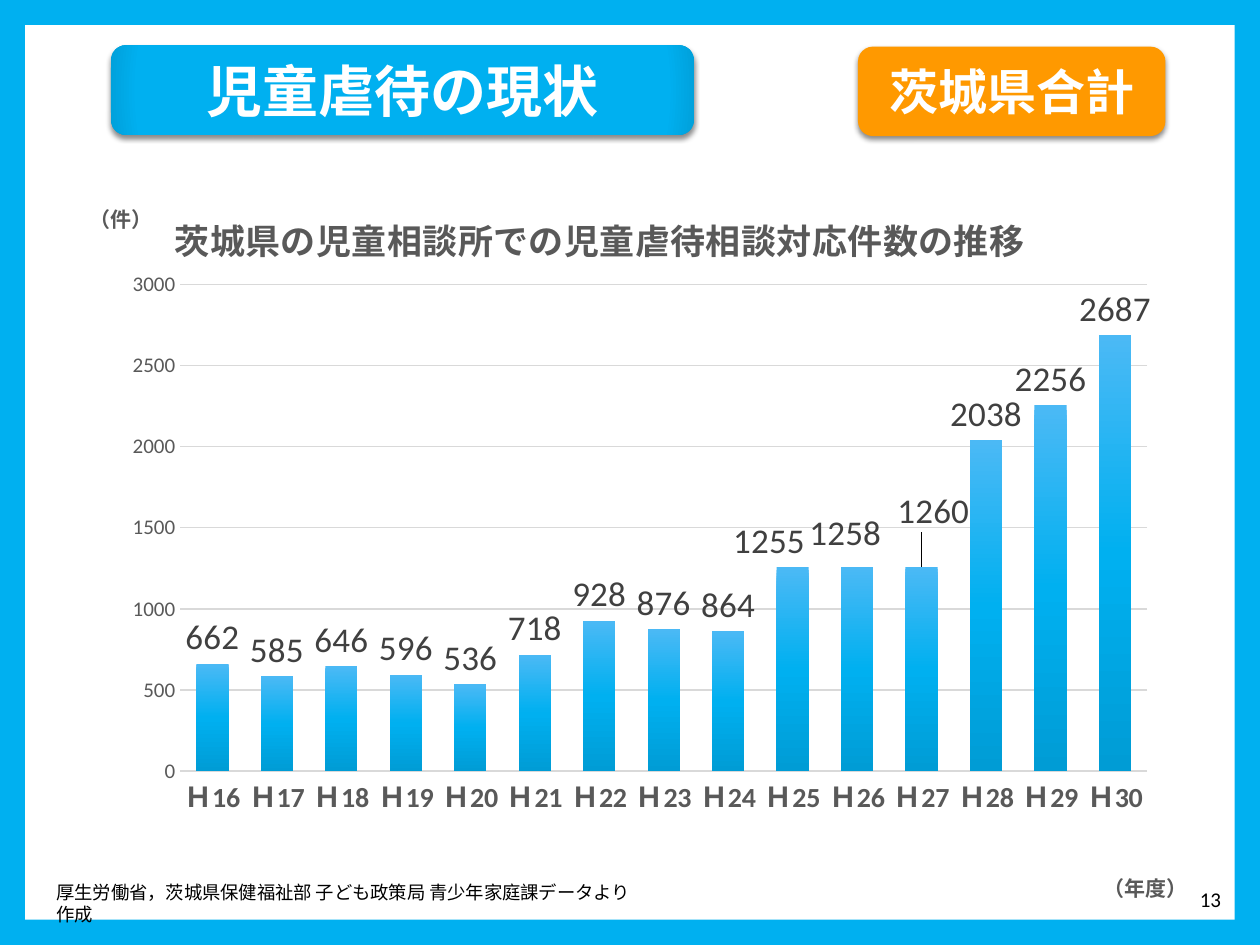
from lxml import etree
from pptx import Presentation
from pptx import util as u
from pptx.chart.data import CategoryChartData
from pptx.dml.color import RGBColor
from pptx.enum import chart as ch, shapes, text
from pptx.oxml import parse_xml
from pptx.oxml.ns import nsdecls, qn

BLUE = RGBColor(0x00, 0xB0, 0xF0)
ORANGE = RGBColor(0xFF, 0x99, 0x00)
WHITE = RGBColor(0xFF, 0xFF, 0xFF)
BLACK = RGBColor(0x00, 0x00, 0x00)
GREY = RGBColor(0x59, 0x59, 0x59)
DARK = RGBColor(0x40, 0x40, 0x40)
RULE = RGBColor(0xD9, 0xD9, 0xD9)
SKY = RGBColor(0x4B, 0xB9, 0xF5)
DEEP = RGBColor(0x00, 0x9C, 0xD5)
EDGE = RGBColor(0x00, 0xA0, 0xDA)
CJK = "Noto Sans CJK JP"
LATIN = "Calibri"


def write(p, words, size, color, bold=False, font=CJK):
    r = p.add_run()
    r.text = words
    r.font.size, r.font.bold, r.font.name = u.Pt(size), bold, font
    r.font.color.rgb = color
    ea = etree.SubElement(r.font._element, qn("a:ea"))
    ea.set("typeface", font)


def place(parent, index, **values):
    for old in parent.findall(qn("c:layout")):
        parent.remove(old)
    layout = etree.Element(qn("c:layout"))
    manual = etree.SubElement(layout, qn("c:manualLayout"))
    for name, value in values.items():
        etree.SubElement(manual, qn("c:" + name)).set("val", str(value))
    parent.insert(index, layout)


prs = Presentation()
prs.slide_width, prs.slide_height = u.Inches(10), u.Inches(7.5)
slide = prs.slides.add_slide(prs.slide_layouts[6])
slide.background.fill.solid()
slide.background.fill.fore_color.rgb = BLUE

s = slide.shapes.add_shape(shapes.MSO_SHAPE.RECTANGLE, u.Inches(0.2), u.Inches(0.2),
                           u.Inches(9.6), u.Inches(7.1))
s.shadow.inherit = False
s.fill.solid()
s.fill.fore_color.rgb = WHITE
s.line.fill.background()

for words, left, top, width, size, color in [
    ("茨城県合計", 6.81, 0.37, 2.44, 28, ORANGE),
    ("児童虐待の現状", 0.88, 0.36, 4.63, 32, BLUE),
]:
    s = slide.shapes.add_shape(shapes.MSO_SHAPE.ROUNDED_RECTANGLE, u.Inches(left),
                               u.Inches(top), u.Inches(width), u.Inches(0.71))
    s.fill.solid()
    s.fill.fore_color.rgb = color
    s.line.fill.background()
    s.shadow.inherit = False
    s._element.spPr.find(qn("a:effectLst")).append(parse_xml(
        f'<a:outerShdw {nsdecls("a")} blurRad="38100" dist="25400" dir="5400000" rotWithShape="0">'
        '<a:srgbClr val="000000"><a:alpha val="45000"/></a:srgbClr></a:outerShdw>'))
    tf = s.text_frame
    tf.vertical_anchor = text.MSO_ANCHOR.MIDDLE
    p = tf.paragraphs[0]
    p.alignment = text.PP_ALIGN.CENTER
    write(p, words, size, WHITE, True)
heading = s

data = CategoryChartData()
data.categories = [f"Ｈ{year}" for year in range(16, 31)]
data.add_series("Series 1", [662, 585, 646, 596, 536, 718, 928, 876, 864,
                             1255, 1258, 1260, 2038, 2256, 2687])
chart = slide.shapes.add_chart(ch.XL_CHART_TYPE.COLUMN_CLUSTERED, u.Inches(0.12),
                               u.Inches(1.39), u.Inches(9.36), u.Inches(5.83), data).chart
chart.has_legend = False
chart.font.size, chart.font.name = u.Pt(10), LATIN
chart.font.color.rgb = BLACK

cat, val = chart.category_axis, chart.value_axis
for axis, size, bold in [(cat, 16, True), (val, 12, False)]:
    axis.major_tick_mark = axis.minor_tick_mark = ch.XL_TICK_MARK.NONE
    font = axis.tick_labels.font
    font.size, font.bold, font.name = u.Pt(size), bold, LATIN
    font.color.rgb = GREY
cat.format.line.color.rgb = RULE
cat.format.line.width = u.Pt(1)
val.format.line.fill.background()
val.minimum_scale, val.maximum_scale, val.major_unit = 0, 3000, 500
val.major_gridlines.format.line.color.rgb = RULE
val.major_gridlines.format.line.width = u.Pt(0.75)

for owner, words, size, x, y in [
    (chart, "茨城県の児童相談所での児童虐待相談対応件数の推移", 20, 0.13, 0.04),
    (cat, "（年度）", 12, 0.92, 0.95),
    (val, "（件）", 12, 0.06, 0.03),
]:
    owner.has_title = True
    title = chart.chart_title if owner is chart else owner.axis_title
    tf = title.text_frame
    tf._txBody.find(qn("a:bodyPr")).set("rot", "0")
    write(tf.paragraphs[0], words, size, GREY, True)
    place(title._element, 1, xMode="edge", yMode="edge", x=x, y=y)
chart.chart_title.include_in_layout = False
place(chart._chartSpace.chart.plotArea, 0, layoutTarget="inner", xMode="edge",
      yMode="edge", x=0.14, y=0.15, w=0.82, h=0.67)

plot = chart.plots[0]
plot.gap_width, plot.overlap = 100, -24
plot.vary_by_categories = False
series = plot.series[0]
series.format.fill.solid()
labels = series.data_labels
labels.show_value = True
moved = {9: (-0.02, 0), 10: (-0.01, -0.01), 11: (0.01, -0.04)}
points = [series.points[i].data_label for i in moved]
for label in [labels] + points:
    label.position = ch.XL_LABEL_POSITION.OUTSIDE_END
    label.font.size, label.font.name = u.Pt(20), LATIN
    label.font.color.rgb = DARK
for label, (x, y) in zip(series._element.xpath(".//c:dLbl"), moved.values()):
    place(label, 1, x=x, y=y)

for props, stops, direction in [
    (heading._element.spPr, [(0, BLUE), (90, BLUE), (100, EDGE)],
     '<a:path path="circle"><a:fillToRect l="100000" t="100000" r="100000" b="100000"/></a:path>'),
    (series._element.find(qn("c:spPr")), [(0, SKY), (50, BLUE), (100, DEEP)],
     '<a:lin ang="5400000" scaled="0"/>'),
]:
    marks = "".join(f'<a:gs pos="{pos * 1000}"><a:srgbClr val="{color}"/></a:gs>'
                    for pos, color in stops)
    props.replace(props.find(qn("a:solidFill")), parse_xml(
        f'<a:gradFill {nsdecls("a")} rotWithShape="1"><a:gsLst>{marks}</a:gsLst>{direction}</a:gradFill>'))

for words, left, width, height, size, font, align, anchor in [
    ("厚生労働省，茨城県保健福祉部 子ども政策局 青少年家庭課データより作成", 0.35, 4.88, 0.28,
     10.5, CJK, text.PP_ALIGN.LEFT, text.MSO_ANCHOR.TOP),
    ("13", 8.39, 1.4, 0.4, 12, LATIN, text.PP_ALIGN.RIGHT, text.MSO_ANCHOR.MIDDLE),
]:
    tf = slide.shapes.add_textbox(u.Inches(left), u.Inches(6.94), u.Inches(width),
                                  u.Inches(height)).text_frame
    tf.word_wrap = True
    tf.vertical_anchor = anchor
    p = tf.paragraphs[0]
    p.alignment = align
    write(p, words, size, BLACK, font=font)

prs.save("out.pptx")
